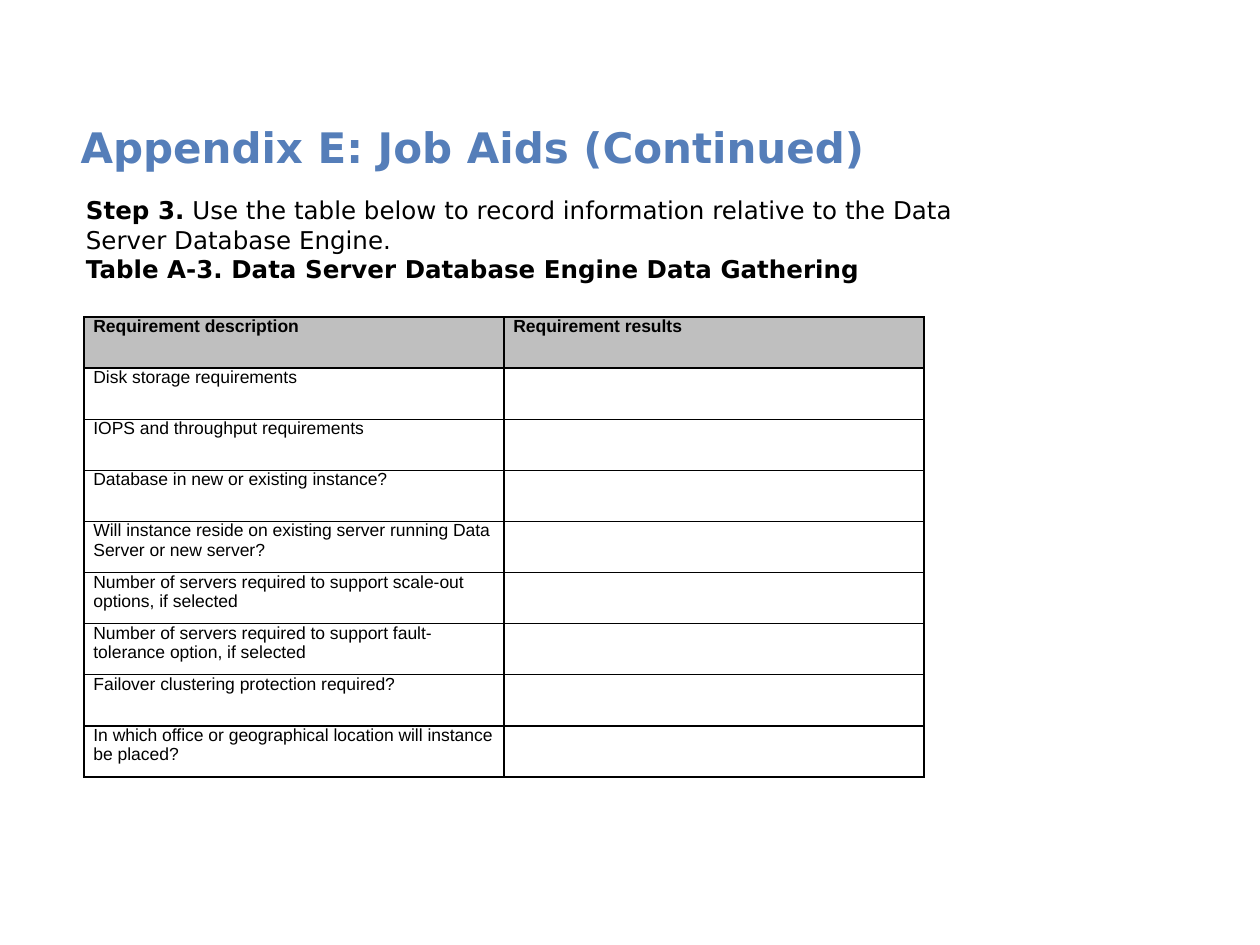
from lxml.etree import SubElement
from pptx import Presentation
from pptx.dml.color import RGBColor
from pptx.enum.text import MSO_ANCHOR as Anchor
from pptx.oxml.ns import qn
from pptx.util import Pt

COLORS = {"title": "557EB9", "text": "000000", "header": "BFBFBF", "border": "000000"}
HEADING_FONT, TABLE_FONT = "DejaVu Sans", "Arial"

HEADERS = ("Requirement description", "Requirement results")
REQUIREMENTS = (
    "Disk storage requirements",
    "IOPS and throughput requirements",
    "Database in new or existing instance?",
    "Will instance reside on existing server running Data Server or new server?",
    "Number of servers required to support scale-out options, if selected",
    "Number of servers required to support fault-tolerance option, if selected",
    "Failover clustering protection required?",
    "In which office or geographical location will instance be placed?",
)


def set_font(font, name, size, color, bold=None):
    font.name, font.size, font.bold = name, Pt(size), bold
    font.color.rgb = RGBColor.from_string(COLORS[color])


def add_text_frame(slide, left, top, width, height):
    frame = slide.shapes.add_textbox(Pt(left), Pt(top), Pt(width), Pt(height)).text_frame
    frame.word_wrap = True
    return frame


def add_title(slide):
    frame = add_text_frame(slide, 42.5, 66, 648, 36)
    frame.margin_left = frame.margin_right = Pt(3.6)
    frame.vertical_anchor = Anchor.MIDDLE
    title = frame.paragraphs[0]
    title.text = "Appendix E: Job Aids (Continued)"
    set_font(title.font, HEADING_FONT, 24, "title", True)


def add_instructions(slide):
    frame = add_text_frame(slide, 42, 108, 516, 177)
    step, caption = frame.paragraphs[0], frame.add_paragraph()
    label, instruction = step.add_run(), step.add_run()
    label.text = "Step 3."
    label.font.bold = True
    instruction.text = (" Use the table below to record information relative to "
                        "the Data Server Database Engine.")
    caption.text = "Table A-3. Data Server Database Engine Data Gathering"
    set_font(step.font, HEADING_FONT, 14, "text")
    set_font(caption.font, HEADING_FONT, 14, "text", True)


def add_borders(cell):
    """Draw a 1 pt line on all four sides; call before the fill is set."""
    properties = cell._tc.get_or_add_tcPr()
    for side in ("a:lnL", "a:lnR", "a:lnT", "a:lnB"):
        line = SubElement(properties, qn(side), w=str(Pt(1)))
        fill = SubElement(line, qn("a:solidFill"))
        SubElement(fill, qn("a:srgbClr"), val=COLORS["border"])


def fill_cell(cell, text, is_header):
    add_borders(cell)
    if is_header:
        cell.fill.solid()
        cell.fill.fore_color.rgb = RGBColor.from_string(COLORS["header"])
    else:
        cell.fill.background()
    cell.margin_left = cell.margin_right = Pt(5.4)
    cell.margin_top = cell.margin_bottom = 0
    entry = cell.text_frame.paragraphs[0]
    entry.text = text
    entry.line_spacing, entry.space_after = Pt(11), Pt(3)
    set_font(entry.font, TABLE_FONT, 10, "text", is_header)


def add_requirements_table(slide):
    rows = [HEADERS] + [(requirement, "") for requirement in REQUIREMENTS]
    table = slide.shapes.add_table(len(rows), len(HEADERS), Pt(48), Pt(181.2),
                                   Pt(480), Pt(29.2 * len(rows))).table
    for row_index, row in enumerate(rows):
        for column_index, text in enumerate(row):
            fill_cell(table.cell(row_index, column_index), text, row_index == 0)


def main():
    deck = Presentation()
    deck.slide_width, deck.slide_height = Pt(720), Pt(540)
    slide = deck.slides.add_slide(deck.slide_layouts[6])
    add_title(slide)
    add_instructions(slide)
    add_requirements_table(slide)
    deck.save("out.pptx")


if __name__ == "__main__":
    main()
